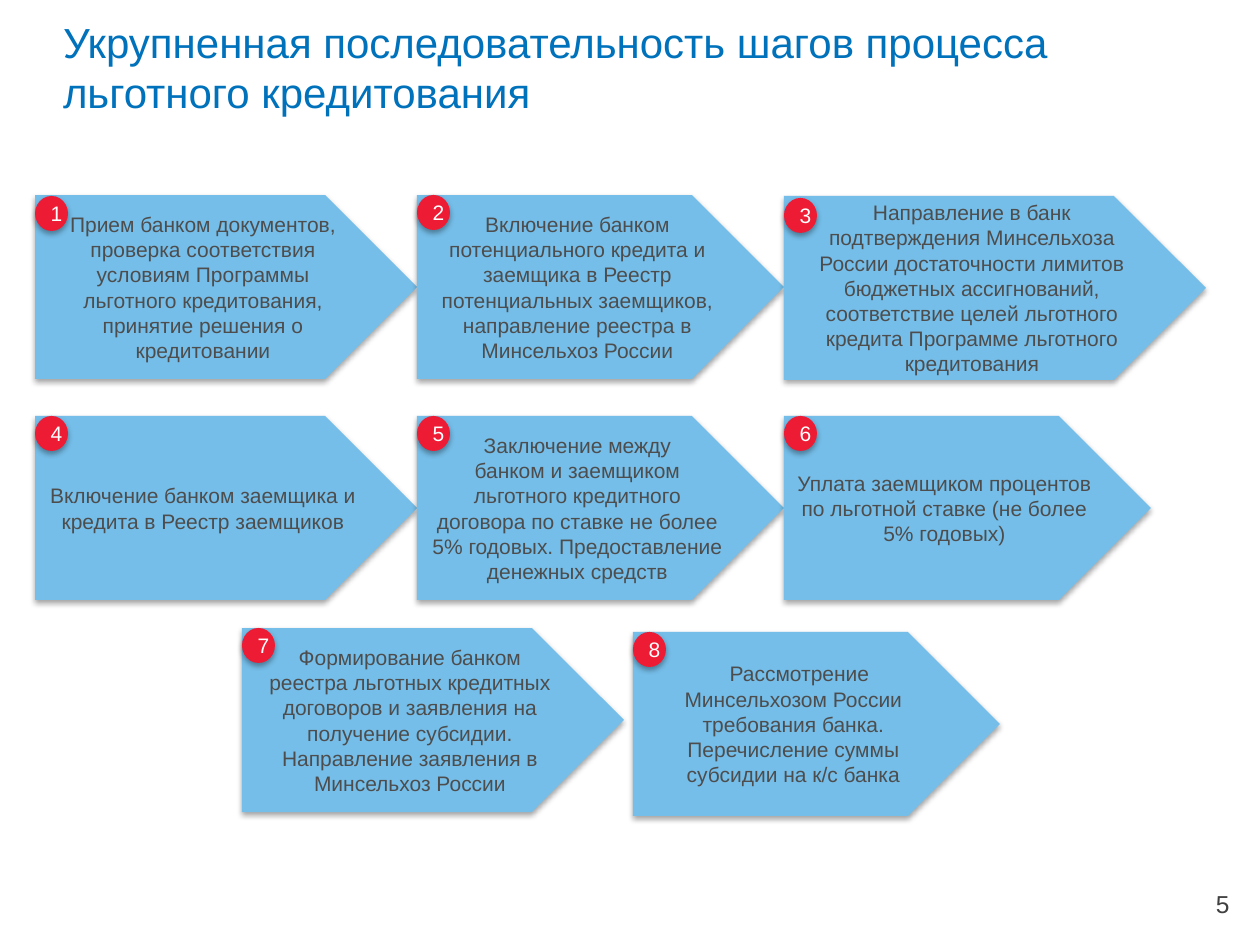
"""Build the slide with the eight steps of the subsidised lending process."""
from lxml.etree import SubElement
from pptx import Presentation
from pptx.dml.color import RGBColor
from pptx.enum.shapes import MSO_SHAPE
from pptx.enum.text import MSO_ANCHOR, PP_ALIGN
from pptx.oxml.ns import qn
from pptx.util import Pt

SCALE = 914400 / 126
TITLE = RGBColor(0x00, 0x72, 0xBC)
PLATE = RGBColor(0x75, 0xBE, 0xE9)
BADGE = RGBColor(0xED, 0x1B, 0x34)
WHITE = RGBColor(0xFF, 0xFF, 0xFF)
INK = RGBColor(0x4D, 0x4D, 0x4D)
GREY = RGBColor(0x40, 0x40, 0x40)

LEFT, MID, RIGHT = 35, 417, 784
WIDE, SLIM, LONG = 382, 367, 422
TALL = 184
STEPS = [
    (LEFT, 195, WIDE, 1, ["Прием банком документов, проверка соответствия условиям Программы "
                          "льготного кредитования, принятие решения о кредитовании"]),
    (MID, 195, SLIM, 0, ["Включение банком потенциального кредита и заемщика в Реестр "
                         "потенциальных заемщиков, направление реестра в Минсельхоз России"]),
    (RIGHT, 196, LONG, 2, ["Направление в банк подтверждения Минсельхоза России достаточности "
                           "лимитов бюджетных ассигнований, соответствие целей льготного "
                           "кредита Программе льготного кредитования"]),
    (LEFT, 416, WIDE, 0, ["Включение банком заемщика и кредита в Реестр заемщиков"]),
    (MID, 416, SLIM, 0, ["Заключение между",
                         "банком и заемщиком льготного кредитного договора по ставке не более "
                         "5% годовых. Предоставление денежных средств"]),
    (RIGHT, 416, SLIM, 0, ["Уплата заемщиком процентов по льготной ставке (не более 5% годовых)"]),
    (242, 628, WIDE, 0, ["Формирование банком",
                         "реестра льготных кредитных договоров и заявления на получение "
                         "субсидии. Направление заявления в Минсельхоз России"]),
    (633, 632, SLIM, 0, ["Рассмотрение Минсельхозом России требования банка. "
                         "Перечисление суммы субсидии на к/с банка"]),
]


def write(frame, lines, size, color, align):
    frame.word_wrap = True
    for i, line in enumerate(lines):
        para = frame.add_paragraph() if i else frame.paragraphs[0]
        para.alignment = align
        run = para.add_run()
        run.text = line
        run.font.name = "Arial"
        run.font.size = Pt(size)
        run.font.color.rgb = color


def draw(kind, box, fill, lines, color):
    shape = slide.shapes.add_shape(kind, *[round(n * SCALE) for n in box])
    shape.fill.solid()
    shape.fill.fore_color.rgb = fill
    shape.line.fill.background()
    shape.shadow.inherit = False
    effects = shape._element.spPr.find(qn("a:effectLst"))
    shade = SubElement(effects, qn("a:outerShdw"), blurRad="40000", dist="23000",
                       dir="5400000", rotWithShape="0")
    tint = SubElement(shade, qn("a:srgbClr"), val="000000")
    SubElement(tint, qn("a:alpha"), val="35000")
    shape.text_frame.vertical_anchor = MSO_ANCHOR.MIDDLE
    write(shape.text_frame, lines, 12, color, PP_ALIGN.CENTER)
    return shape


deck = Presentation()
deck.slide_width, deck.slide_height = round(1260 * SCALE), round(945 * SCALE)
slide = deck.slides.add_slide(deck.slide_layouts[5])

title = slide.shapes.title
title.left, title.top, title.width, title.height = [round(n * SCALE) for n in (63, 16, 1063, 120)]
frame = title.text_frame
frame.margin_left = frame.margin_top = frame.margin_right = frame.margin_bottom = 0
frame.vertical_anchor = MSO_ANCHOR.TOP
write(frame, ["Укрупненная последовательность шагов процесса льготного кредитования"],
      24, TITLE, PP_ALIGN.LEFT)

page = slide.shapes.add_textbox(*[round(n * SCALE) for n in (948, 879, 294, 50)])
page.text_frame.vertical_anchor = MSO_ANCHOR.MIDDLE
write(page.text_frame, ["5"], 14, GREY, PP_ALIGN.RIGHT)

for x, y, width, drop, lines in STEPS:
    plate = draw(MSO_SHAPE.PENTAGON, (x, y, width, TALL), PLATE, lines, INK)
first = plate.text_frame.paragraphs[0]
first._p.get_or_add_pPr().set("indent", str(round(12 * SCALE)))

for i, (x, y, width, drop, lines) in enumerate(STEPS, 1):
    draw(MSO_SHAPE.FLOWCHART_CONNECTOR, (x, y + drop, 33, 35), BADGE, [str(i)], WHITE)

deck.save("out.pptx")
